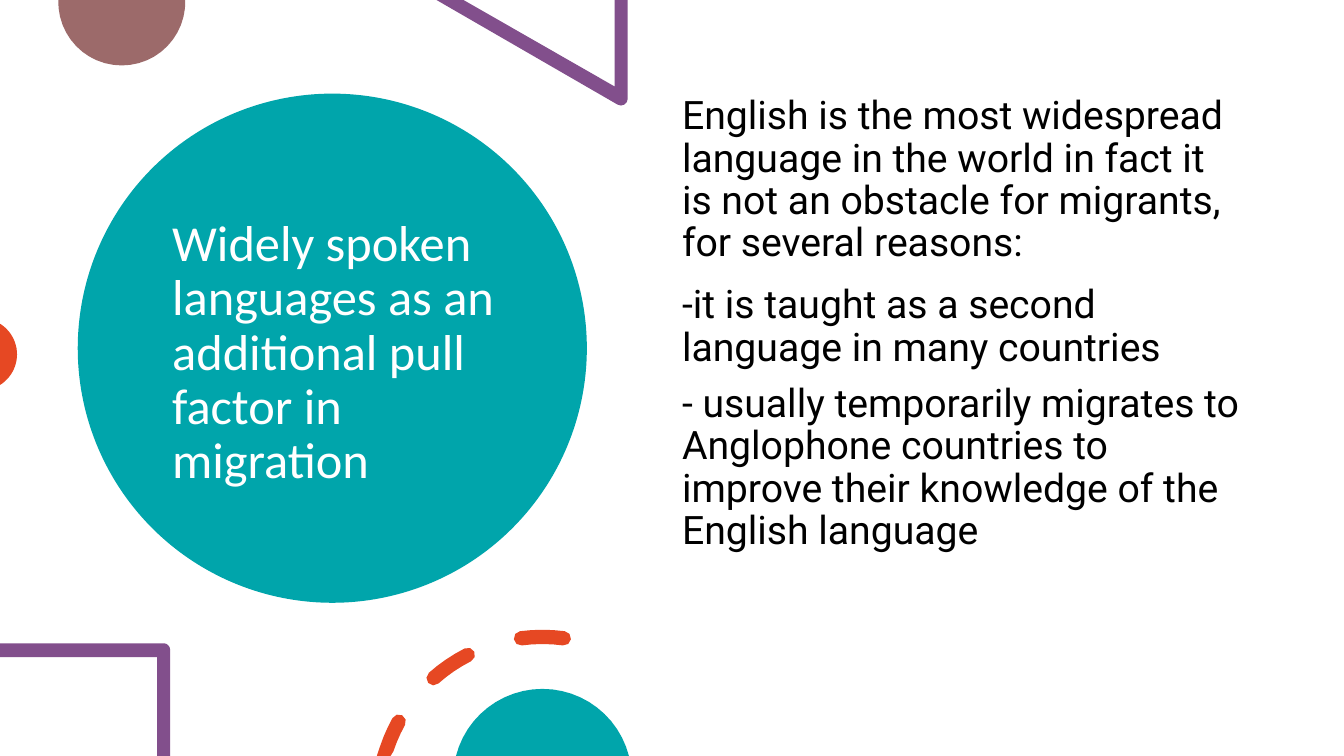
from dataclasses import dataclass
from math import cos, radians, sin

from pptx import Presentation
from pptx.dml.color import RGBColor
from pptx.enum.shapes import MSO_SHAPE as SHAPE
from pptx.enum.text import MSO_ANCHOR as ANCHOR
from pptx.util import Cm, Pt

WIDTH, HEIGHT = 33.87, 19.05


@dataclass(frozen=True)
class Theme:
    """Colours, fonts and type sizes of the slide."""
    teal: str = "00A5AB"
    orange: str = "E64823"
    purple: str = "824F8C"
    rose: str = "9C6A6A"
    white: str = "FFFFFF"
    black: str = "000000"
    title_font: str = "Calibri"
    body_font: str = "Roboto"
    title_size: int = 36
    body_size: int = 28


def arc(cx, cy, r, start, end, steps=4):
    """Return points in cm along an arc, with angles counterclockwise."""
    angles = [radians(start + (end - start) * i / steps) for i in range(steps + 1)]
    return [(cx + r * cos(a), cy - r * sin(a)) for a in angles]


def curved_dash(cx, cy, r, half, start, end):
    """Return the outline of a thick arc with round ends."""
    (x1, y1), (x2, y2) = arc(cx, cy, r, start, end, 1)
    return (arc(cx, cy, r + half, start, end)
            + arc(x2, y2, half, end, end + 180)[1:-1]
            + arc(cx, cy, r - half, end, start)
            + arc(x1, y1, half, start + 180, start + 360)[1:-1])


class Deck:
    """Holds the theme and the current slide."""

    def __init__(self, prs, theme):
        """Add a blank slide to the presentation."""
        self.theme = theme
        self.s = prs.slides.add_slide(prs.slide_layouts[6])

    def paint(self, sp, color):
        """Give a shape a plain fill without line or shadow."""
        sp.shadow.inherit = False
        sp.fill.solid()
        sp.fill.fore_color.rgb = RGBColor.from_string(color)
        sp.line.fill.background()

    def circle(self, x, y, size, color):
        """Draw a whole circle."""
        sp = self.s.shapes.add_shape(SHAPE.OVAL, Cm(x), Cm(y), Cm(size), Cm(size))
        self.paint(sp, color)

    def outline(self, points, color):
        """Fill an outline, kept within the slide edges."""
        pts = [(Cm(min(max(x, 0), WIDTH)), Cm(min(max(y, 0), HEIGHT)))
               for x, y in points]
        fb = self.s.shapes.build_freeform(*pts[0])
        fb.add_line_segments(pts[1:], close=True)
        self.paint(fb.convert_to_shape(), color)

    def text(self, text, *, box, font, size, color, anchor=ANCHOR.TOP, gaps=()):
        """Write one paragraph per line, with gaps in points before later ones."""
        tf = self.s.shapes.add_textbox(*map(Cm, box)).text_frame
        tf.word_wrap = True
        tf.vertical_anchor = anchor
        tf.text = text
        for p in tf.paragraphs:
            p.line_spacing = 0.9
            p.font.name = font
            p.font.size = Pt(size)
            p.font.color.rgb = RGBColor.from_string(color)
        for p, gap in zip(tf.paragraphs[1:], gaps):
            p.space_before = Pt(gap)


def main():
    """Build the slide and save it."""
    prs = Presentation()
    prs.slide_width, prs.slide_height = Cm(WIDTH), Cm(HEIGHT)
    t = Theme()
    deck = Deck(prs, t)

    deck.circle(1.96, 2.36, 12.83, t.teal)
    deck.text("Widely spoken languages as an additional pull factor in migration",
              box=(4.09, 3.71, 8.99, 10.41), font=t.title_font,
              size=t.title_size, color=t.white, anchor=ANCHOR.MIDDLE)

    for cx, cy, r, start, end, color in ((3.07, 0.05, 1.6, -182, 2, t.rose),
                                         (-0.48, 8.93, 0.91, -58, 58, t.orange),
                                         (13.67, 19.61, 2.25, 14.4, 165.6, t.teal)):
        deck.outline(arc(cx, cy, r, start, end, 24), color)

    triangle = [(15.82, 0), (15.49, 0), (15.49, 2.18), (11.68, 0), (11, 0)]
    deck.outline(triangle + arc(15.65, 2.49, 0.17, -120, 0), t.purple)
    frame = [(4.29, HEIGHT), (3.96, HEIGHT), (3.96, 16.56), (0, 16.56), (0, 16.21)]
    deck.outline(frame + arc(4.12, 16.38, 0.17, 90, 0), t.purple)

    for start, end in ((82.5, 97.5), (117, 131.5), (151, 165)):
        deck.outline(curved_dash(13.67, 20.19, 4.14, 0.18, start, end), t.orange)

    deck.text("English is the most widespread language in the world in fact it is "
              "not an obstacle for migrants, for several reasons:\n"
              "-it is taught as a second language in many countries\n"
              "- usually temporarily migrates to Anglophone countries to improve "
              "their knowledge of the English language",
              box=(16.94, 2.29, 14.61, 13.59), font=t.body_font,
              size=t.body_size, color=t.black, gaps=(14, 10))
    prs.save("out.pptx")


if __name__ == "__main__":
    main()
